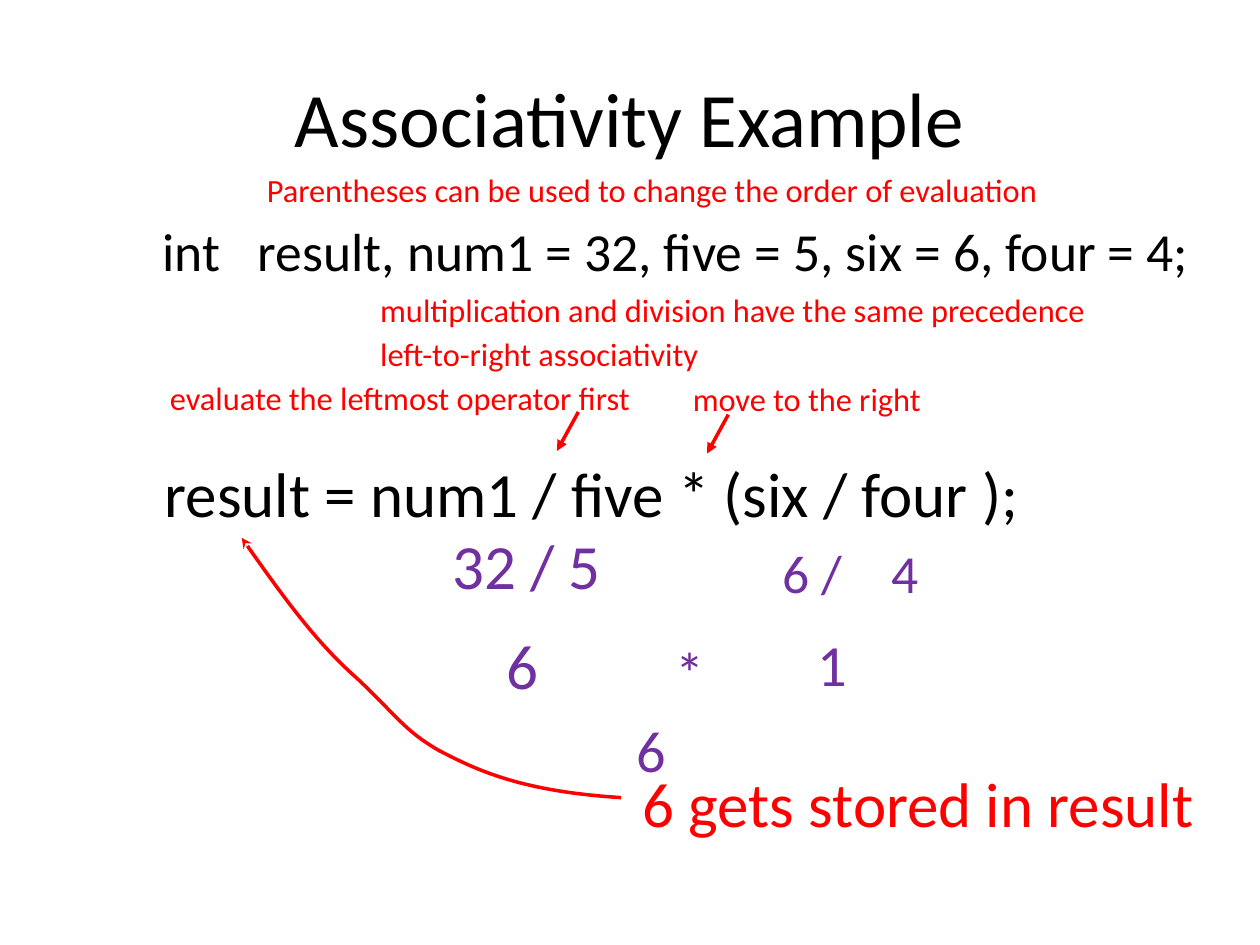
from lxml.etree import SubElement as Sub
from pptx import Presentation
from pptx.dml.color import RGBColor as Rgb
from pptx.enum.shapes import MSO_CONNECTOR as Link
from pptx.enum.text import MSO_ANCHOR as Anchor, PP_ALIGN as Align
from pptx.oxml.ns import qn
from pptx.util import Pt

INK = {"black": "000000", "red": "FF0000", "purple": "7030A0"}
FONT = "Calibri"

CODE = [
    ("int\tresult, num1 = 32, five = 5, six = 6, four = 4;",
     (85.7, 121, 622, 49.7), 30.6, 54.5),
    ("result = num1 / five * (six / four );", (87.1, 256.3, 582, 49.7), 36, None),
]
STEPS = [
    ("32 / 5", (251.3, 297.4, 120, 49.7), 36, None),
    ("6 /\t4", (440, 305.3, 96.5, 40.3), 30.6, 62.6),
    ("6", (282.2, 354.2, 48.2, 49.7), 36, None),
    ("*", (378.7, 360, 76.3, 42.5), 33.3, None),
    ("1", (460, 355.7, 51, 40.3), 33.3, None),
    ("6", (356.4, 404.6, 51, 40.3), 33.3, None),
]
NOTES = [
    ("Parentheses can be used to change the order of evaluation",
     (145.4, 93.6, 502.6, 28), 18.5, None),
    ("multiplication and division have the same precedence",
     (210.2, 162, 460.8, 28), 18.5, None),
    ("left-to-right associativity", (210.2, 187.2, 228.2, 28), 18.5, None),
    ("evaluate the leftmost operator first", (90, 212.4, 312.5, 28), 18.5, None),
    ("move to the right", (388.8, 213.1, 156.2, 28), 18.5, None),
    ("6 gets stored in result", (360, 433.4, 365.8, 67.7), 36, None),
]
ARROWS = [(330.5, 235.4), (416.2, 236.9)]
CURVE = [
    (355, 455.8),
    (297.4, 452.2), (272.2, 439.9), (251.3, 429.1),
    (231.1, 417.6), (226.8, 409), (203.8, 387.4),
    (180, 366.5), (159.1, 337), (138.2, 307.4),
]


def place(shape, box):
    shape.left, shape.top, shape.width, shape.height = map(Pt, box)


def write(shape, text, size=18, color="black", align=Align.LEFT,
          anchor=Anchor.TOP, tab=None):
    frame = shape.text_frame
    frame.word_wrap = True
    frame.vertical_anchor = anchor
    para = frame.paragraphs[0]
    para.alignment = align
    run = para.add_run()
    run.text = text
    run.font.name = FONT
    run.font.size = Pt(size)
    run.font.color.rgb = Rgb.from_string(INK[color])
    if tab:
        stops = Sub(para._p.get_or_add_pPr(), qn("a:tabLst"))
        Sub(stops, qn("a:tab"), pos=str(Pt(tab)), algn="l")


def add_text(slide, text, box, **style):
    write(slide.shapes.add_textbox(*map(Pt, box)), text, **style)


def style_line(shape, head):
    shape.line.color.rgb = Rgb.from_string(INK["red"])
    shape.line.width = Pt(2)
    Sub(shape.line._get_or_add_ln(), qn("a:tailEnd"), type=head)


def add_arrow(slide, left, top):
    ends = map(Pt, (left, top, left - 12.2, top + 22.3))
    arrow = slide.shapes.add_connector(Link.STRAIGHT, *ends)
    style_line(arrow, "triangle")
    Sub(arrow._element.spPr, qn("a:effectLst"))


def add_curve(slide, points):
    start, *rest = [(Pt(x), Pt(y)) for x, y in points]
    pen = slide.shapes.build_freeform(*start)
    pen.add_line_segments(rest, close=False)
    curve = pen.convert_to_shape()
    curve.shadow.inherit = False
    curve.fill.background()
    style_line(curve, "stealth")
    track = next(curve._element.iter(qn("a:path")))
    lines = track.findall(qn("a:lnTo"))
    for first in range(0, len(lines), 3):
        bend = Sub(track, qn("a:cubicBezTo"))
        for line in lines[first:first + 3]:
            bend.append(line[0])
            track.remove(line)


def main():
    deck = Presentation()
    deck.slide_width, deck.slide_height = Pt(720), Pt(540)
    slide = deck.slides.add_slide(deck.slide_layouts[5])
    title = slide.shapes.title
    place(title, (36, 21.6, 648, 90))
    write(title, "Associativity Example", size=44,
          align=Align.CENTER, anchor=Anchor.MIDDLE)
    for color, group in (("black", CODE), ("purple", STEPS), ("red", NOTES)):
        for text, box, size, tab in group:
            add_text(slide, text, box, size=size, color=color, tab=tab)
    for left, top in ARROWS:
        add_arrow(slide, left, top)
    add_curve(slide, CURVE)
    deck.save("out.pptx")


if __name__ == "__main__":
    main()
